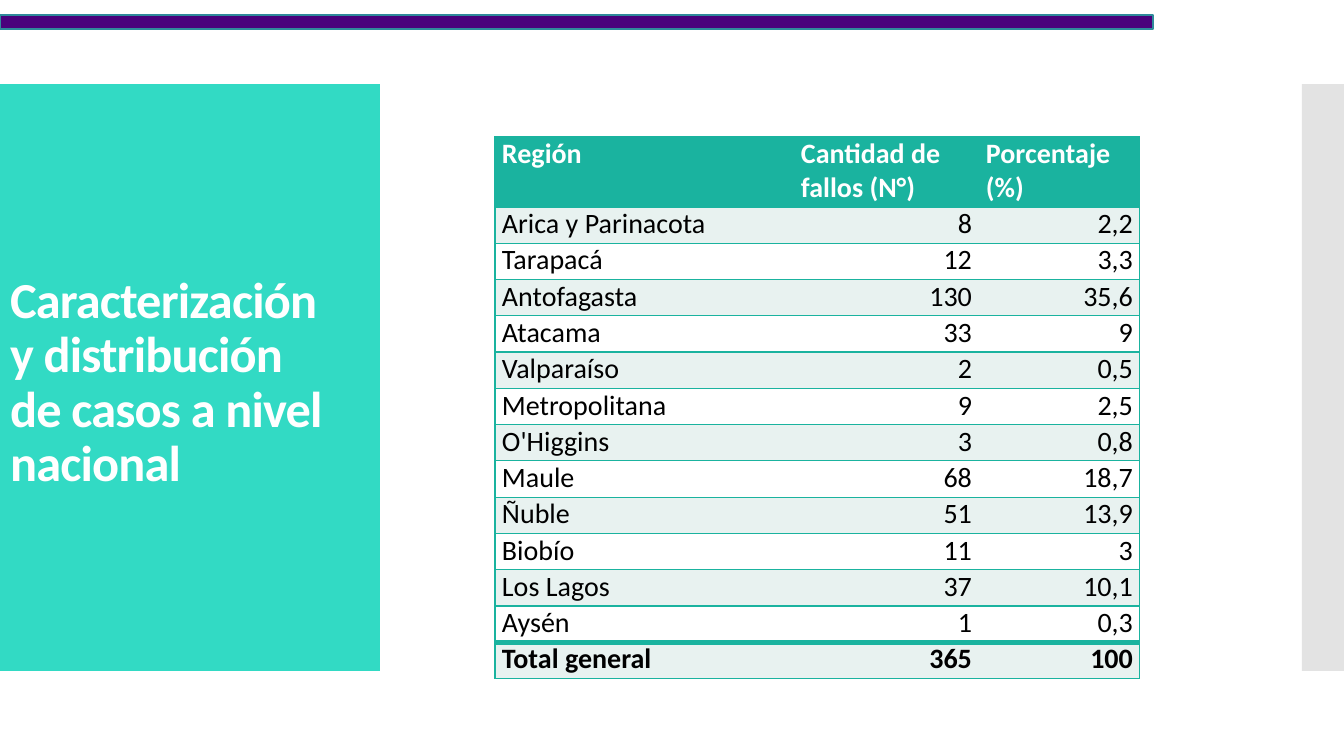
from lxml.etree import SubElement
from pptx import Presentation
from pptx.dml.color import RGBColor
from pptx.enum.shapes import MSO_SHAPE
from pptx.enum.text import MSO_ANCHOR, MSO_AUTO_SIZE, PP_ALIGN
from pptx.oxml.ns import qn
from pptx.util import Pt

EMU_PER_PX = 914400 / 100.8
FONT = "Calibri"
COLORS = {
    "panel": "32DAC4",
    "side": "C8C8C8",
    "strip": "4A017C",
    "strip_line": "2F8A9B",
    "accent": "1AB39F",
    "band": "E8F2F0",
    "white": "FFFFFF",
    "black": "000000",
}
TITLE = "Caracterización y distribución de casos a nivel nacional"
ROWS = [
    ("Región", "Cantidad de fallos (N°)", "Porcentaje (%)"),
    ("Arica y Parinacota", "8", "2,2"),
    ("Tarapacá", "12", "3,3"),
    ("Antofagasta", "130", "35,6"),
    ("Atacama", "33", "9"),
    ("Valparaíso", "2", "0,5"),
    ("Metropolitana", "9", "2,5"),
    ("O'Higgins", "3", "0,8"),
    ("Maule", "68", "18,7"),
    ("Ñuble", "51", "13,9"),
    ("Biobío", "11", "3"),
    ("Los Lagos", "37", "10,1"),
    ("Aysén", "1", "0,3"),
    ("Total general", "365", "100"),
]
COLUMN_WIDTHS = (299, 185, 161)
HEADER_HEIGHT = 70
BODY_HEIGHT = 472


def px(length):
    return round(length * EMU_PER_PX)


def color(name):
    return RGBColor.from_string(COLORS[name])


def add_panel(page, left, top, width, height, fill, line=None, opacity=None):
    panel = page.shapes.add_shape(
        MSO_SHAPE.RECTANGLE, px(left), px(top), px(width), px(height))
    panel.shadow.inherit = False
    panel.fill.solid()
    panel.fill.fore_color.rgb = color(fill)
    if opacity is not None:
        tint = panel._element.spPr.find(qn("a:solidFill"))[0]
        SubElement(tint, qn("a:alpha"), val=str(opacity * 1000))
    if line:
        panel.line.color.rgb = color(line)
        panel.line.width = Pt(0.85)
    else:
        panel.line.fill.background()


def add_span(para, text, size, color_name, bold):
    span = para.add_run()
    span.text = text
    span.font.name = FONT
    span.font.size = Pt(size)
    span.font.bold = bold
    span.font.color.rgb = color(color_name)
    return span


def set_title(page):
    title = page.shapes.title
    page.shapes._spTree.append(title._element)  # bring in front of the panels
    title.left, title.top, title.width, title.height = map(px, (0, 130, 351, 507))
    box = title.text_frame
    box.word_wrap = True
    box.auto_size = MSO_AUTO_SIZE.NONE
    box.vertical_anchor = MSO_ANCHOR.MIDDLE
    para = box.paragraphs[0]
    para.alignment = PP_ALIGN.LEFT
    para.line_spacing = 0.9
    span = add_span(para, TITLE, 36, "white", True)
    span.font._element.set("spc", "-60")


def set_borders(cell, widths):
    """Draw left, right, top and bottom borders in points; 0 means none."""
    properties = cell._tc.get_or_add_tcPr()
    for side, width in zip("LRTB", widths):
        border = SubElement(properties, qn(f"a:ln{side}"), w=str(Pt(width)))
        if width:
            fill = SubElement(border, qn("a:solidFill"))
            SubElement(fill, qn("a:srgbClr"), val=COLORS["accent"])
        else:
            SubElement(border, qn("a:noFill"))


def fill_cell(cell, text, row, column):
    last_row, last_column = len(ROWS) - 1, len(COLUMN_WIDTHS) - 1
    header = row == 0
    set_borders(cell, (
        int(column == 0),
        int(column == last_column),
        4 if row == last_row else 1,
        4 if row == last_row - 1 else 1,
    ))
    cell.fill.solid()
    cell.fill.fore_color.rgb = color(
        "accent" if header else "band" if row % 2 else "white")
    cell.margin_left = cell.margin_right = px(7)
    cell.margin_top = cell.margin_bottom = 0
    para = cell.text_frame.paragraphs[0]
    para.alignment = PP_ALIGN.RIGHT if column and not header else PP_ALIGN.LEFT
    add_span(para, text, 20, "white" if header else "black", row in (0, last_row))


def add_region_table(page):
    frame = page.shapes.add_table(
        len(ROWS), len(COLUMN_WIDTHS), px(495), px(137),
        px(sum(COLUMN_WIDTHS)), px(HEADER_HEIGHT + BODY_HEIGHT))
    table = frame.table
    table.horz_banding = False
    for column, width in zip(table.columns, COLUMN_WIDTHS):
        column.width = px(width)
    for index, values in enumerate(ROWS):
        table.rows[index].height = (
            px(BODY_HEIGHT / (len(ROWS) - 1)) if index else px(HEADER_HEIGHT))
        for column, text in enumerate(values):
            fill_cell(table.cell(index, column), text, index, column)


def main():
    deck = Presentation()
    deck.slide_width, deck.slide_height = px(1344), px(756)
    page = deck.slides.add_slide(deck.slide_layouts[5])
    add_panel(page, 0, 84, 380, 587, "panel")
    add_panel(page, 1302, 84, 42, 587, "side", opacity=50)
    add_panel(page, 0, 15, 1153, 14, "strip", line="strip_line")
    set_title(page)
    add_region_table(page)
    deck.save("out.pptx")


if __name__ == "__main__":
    main()
